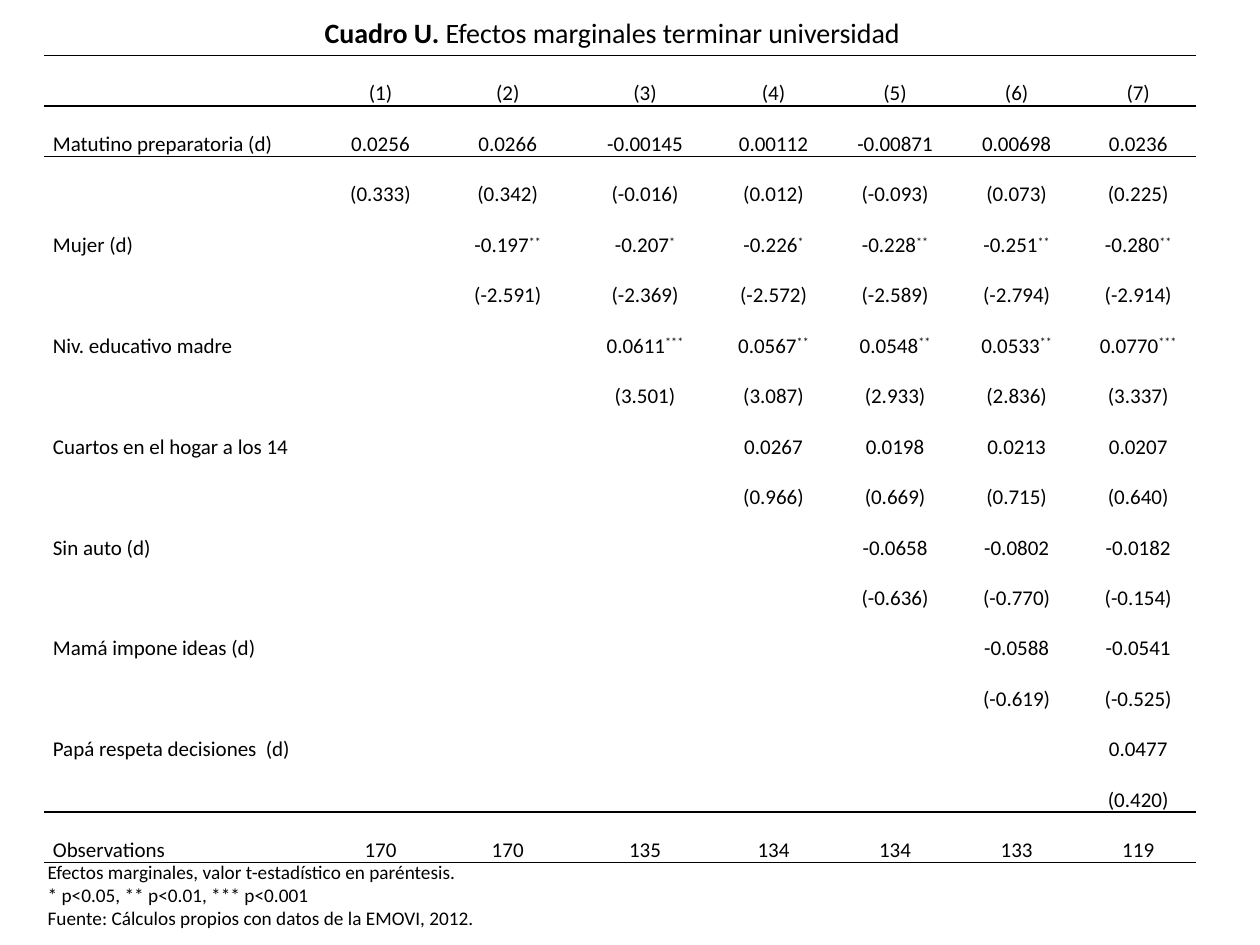
from lxml import etree
from pptx import Presentation
from pptx.dml.color import RGBColor
from pptx.enum import text as t
from pptx.oxml import ns
from pptx.util import Inches, Pt

BLACK = RGBColor(0, 0, 0)
FONT = "Calibri"
NO_GRID = "{2D5ABB26-0587-4C30-8999-92F81FD0307C}"
TITLE = [("Cuadro U.", True), (" Efectos marginales terminar universidad", False)]
NOTES = [
    "Efectos marginales, valor t-estadístico en paréntesis.",
    "* p<0.05, ** p<0.01, *** p<0.001",
    "Fuente: Cálculos propios con datos de la EMOVI, 2012.",
]
COLS = [2.24, 0.86, 1.16, 1.02, 1.02, 0.91, 1.02, 0.91]
ROW_H = 0.4
MODELS = ["(1)", "(2)", "(3)", "(4)", "(5)", "(6)", "(7)"]
EFFECTS = [
    ("Matutino preparatoria (d)",
     ["0.0256", "0.0266", "-0.00145", "0.00112", "-0.00871", "0.00698", "0.0236"],
     ["0.333", "0.342", "-0.016", "0.012", "-0.093", "0.073", "0.225"]),
    ("Mujer (d)",
     ["-0.197**", "-0.207*", "-0.226*", "-0.228**", "-0.251**", "-0.280**"],
     ["-2.591", "-2.369", "-2.572", "-2.589", "-2.794", "-2.914"]),
    ("Niv. educativo madre",
     ["0.0611***", "0.0567**", "0.0548**", "0.0533**", "0.0770***"],
     ["3.501", "3.087", "2.933", "2.836", "3.337"]),
    ("Cuartos en el hogar a los 14",
     ["0.0267", "0.0198", "0.0213", "0.0207"],
     ["0.966", "0.669", "0.715", "0.640"]),
    ("Sin auto (d)", ["-0.0658", "-0.0802", "-0.0182"], ["-0.636", "-0.770", "-0.154"]),
    ("Mamá impone ideas (d)", ["-0.0588", "-0.0541"], ["-0.619", "-0.525"]),
    ("Papá respeta decisiones  (d)", ["0.0477"], ["0.420"]),
]
OBSERVATIONS = ["170", "170", "135", "134", "134", "133", "119"]


def add_run(p, text, size, bold=False):
    r = p.add_run()
    r.text = text
    r.font.size, r.font.name, r.font.bold = Pt(size), FONT, bold
    r.font.color.rgb = BLACK
    return r


def table_row(label, values):
    return [label] + [""] * (len(MODELS) - len(values)) + values


def add_border(cell, side):
    ln = etree.SubElement(cell._tc.get_or_add_tcPr(), ns.qn("a:ln" + side), w=str(Pt(1)))
    fill = etree.SubElement(ln, ns.qn("a:solidFill"))
    etree.SubElement(fill, ns.qn("a:srgbClr"), val=str(BLACK))


def fill_cell(cell, text, align):
    cell.margin_left = cell.margin_right = Inches(0.07)
    cell.margin_top = cell.margin_bottom = 0
    p = cell.text_frame.paragraphs[0]
    p.alignment, p.line_spacing = align, 2.0
    number = text.rstrip("*")
    if not number:
        p.font.size = Pt(12)
        return
    add_run(p, number, 12)
    stars = text[len(number):]
    if stars:
        add_run(p, stars, 12).font._element.set("baseline", "30000")


def add_effects_table(s):
    rows = [table_row("", MODELS)]
    for label, effects, t_values in EFFECTS:
        rows.append(table_row(label, effects))
        rows.append(table_row("", [f"({v})" for v in t_values]))
    rows.append(table_row("Observations", OBSERVATIONS))
    last = len(rows) - 1
    ruled = {"T": {0, 1, last}, "B": {0, last - 1, last}}

    frame = s.shapes.add_table(len(rows), len(COLS), Inches(0.35), Inches(0.44),
                               Inches(sum(COLS)), Inches(ROW_H * len(rows)))
    table = frame.table
    table.first_row = table.horz_banding = False
    table._tbl.tblPr.find(ns.qn("a:tableStyleId")).text = NO_GRID
    for col, width in zip(table.columns, COLS):
        col.width = Inches(width)
    for i, values in enumerate(rows):
        table.rows[i].height = Inches(ROW_H)
        for j, text in enumerate(values):
            cell = table.cell(i, j)
            fill_cell(cell, text, t.PP_ALIGN.CENTER if j else t.PP_ALIGN.JUSTIFY)
            for side, lines in ruled.items():
                if i in lines:
                    add_border(cell, side)
            cell.fill.background()


def add_title(s):
    sp = s.shapes.title
    sp.left, sp.top, sp.width, sp.height = Inches(1.16), Inches(0.07), Inches(7.4), Inches(0.37)
    tf = sp.text_frame
    tf.auto_size = t.MSO_AUTO_SIZE.NONE
    tf.vertical_anchor = t.MSO_ANCHOR.TOP
    p = tf.paragraphs[0]
    p.alignment = t.PP_ALIGN.CENTER
    for text, bold in TITLE:
        add_run(p, text, 16, bold)


def add_notes(s):
    sp = s.shapes.add_textbox(Inches(0.28), Inches(6.77), Inches(3.94), Inches(0.66))
    tf = sp.text_frame
    tf.word_wrap = True
    tf.vertical_anchor = t.MSO_ANCHOR.MIDDLE
    for i, note in enumerate(NOTES):
        p = tf.add_paragraph() if i else tf.paragraphs[0]
        p.alignment = t.PP_ALIGN.JUSTIFY
        add_run(p, note, 11)


def main():
    prs = Presentation()
    prs.slide_width, prs.slide_height = Inches(10), Inches(7.5)
    s = prs.slides.add_slide(prs.slide_layouts[5])
    add_notes(s)
    add_title(s)
    add_effects_table(s)
    prs.save("out.pptx")


if __name__ == "__main__":
    main()
